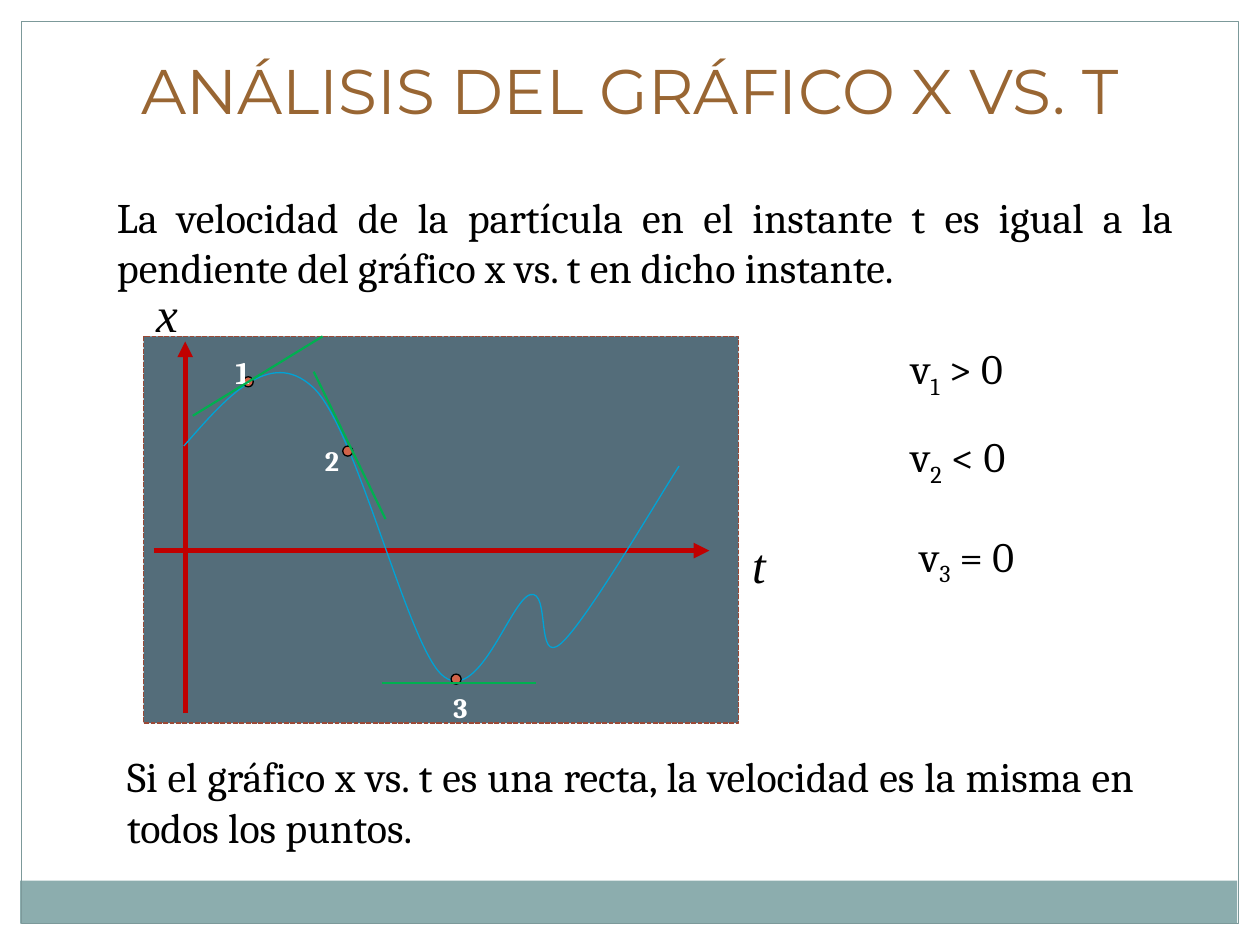
from dataclasses import dataclass

from lxml.etree import SubElement
from pptx import Presentation
from pptx.dml.color import RGBColor
from pptx.enum.dml import MSO_LINE
from pptx.enum.shapes import MSO_CONNECTOR, MSO_SHAPE
from pptx.enum.text import PP_ALIGN
from pptx.oxml.ns import qn
from pptx.shapes.autoshape import Shape
from pptx.slide import Slide
from pptx.util import Inches, Pt

BLACK = RGBColor(0x00, 0x00, 0x00)
WHITE = RGBColor(0xFF, 0xFF, 0xFF)
BROWN = RGBColor(0x99, 0x66, 0x33)
FOOTER_TEAL = RGBColor(0x8C, 0xAD, 0xAE)
FRAME_GRAY = RGBColor(0x7C, 0x99, 0x9A)
PLOT_SLATE = RGBColor(0x54, 0x6D, 0x7A)
PLOT_BORDER = RGBColor(0x9B, 0x49, 0x36)
AXIS_RED = RGBColor(0xC0, 0x00, 0x00)
CURVE_BLUE = RGBColor(0x00, 0xA3, 0xD6)
TANGENT_GREEN = RGBColor(0x00, 0xB0, 0x50)
POINT_ORANGE = RGBColor(0xD1, 0x63, 0x49)

POINT_SIZE = 0.08

Position = tuple[float, float]
Box = tuple[float, float, float, float]


@dataclass(frozen=True)
class TextStyle:
    size: int
    font: str = "Cambria"
    color: RGBColor = BLACK
    bold: bool = False
    italic: bool = False
    align: PP_ALIGN = PP_ALIGN.LEFT


@dataclass(frozen=True)
class Segment:
    start: Position
    end: Position


@dataclass(frozen=True)
class CurvePoint:
    number: str
    position: Position
    label_box: Box
    label_size: int


@dataclass(frozen=True)
class Velocity:
    index: str
    relation: str
    box: Box


TITLE = TextStyle(36, "Montserrat", BROWN, align=PP_ALIGN.CENTER)
BODY = TextStyle(24, align=PP_ALIGN.JUSTIFY)
VELOCITY = TextStyle(24)
AXIS_NAME = TextStyle(28, "Times New Roman", italic=True)

AXES = [
    Segment((1.22, 4.37), (5.63, 4.37)),
    Segment((1.47, 5.66), (1.47, 2.71)),
]
TANGENTS = [
    Segment((1.53, 3.3), (2.56, 2.67)),
    Segment((3.06, 4.12), (2.49, 2.95)),
    Segment((3.03, 5.42), (4.25, 5.42)),
]
# Start point, then two control points and an end point for each arc.
CURVE = [
    (1.46, 3.54),
    (1.8, 3.15), (2.14, 2.76), (2.48, 3.07),
    (2.82, 3.37), (3.22, 5.07), (3.5, 5.35),
    (3.79, 5.63), (4.05, 4.76), (4.21, 4.72),
    (4.37, 4.68), (4.25, 5.28), (4.45, 5.11),
    (4.65, 4.94), (5.24, 3.93), (5.39, 3.7),
]
CURVE_POINTS = [
    CurvePoint("1", (1.93, 2.99), (1.77, 2.75, 0.63, 0.4), 18),
    CurvePoint("2", (2.72, 3.54), (2.48, 3.47, 0.63, 0.37), 16),
    CurvePoint("3", (3.58, 5.35), (3.5, 5.43, 0.63, 0.37), 16),
]
VELOCITIES = [
    Velocity("1", " > 0", (7.13, 2.67, 1.18, 0.5)),
    Velocity("2", " < 0", (7.13, 3.37, 1.34, 0.5)),
    Velocity("3", " = 0", (7.2, 4.16, 1.1, 0.5)),
]


def add_filled_shape(slide: Slide, kind: MSO_SHAPE, box: Box,
                     fill: RGBColor | None = None,
                     line: RGBColor | None = None, width: float = 0.75) -> Shape:
    """Add a preset shape; a missing fill or line colour leaves that part empty."""
    shape = slide.shapes.add_shape(kind, *map(Inches, box))
    shape.shadow.inherit = False
    if fill is None:
        shape.fill.background()
    else:
        shape.fill.solid()
        shape.fill.fore_color.rgb = fill
    if line is None:
        shape.line.fill.background()
    else:
        shape.line.color.rgb = line
        shape.line.width = Pt(width)
    return shape


def add_text(slide: Slide, box: Box, style: TextStyle, *texts: str,
             wrap: bool = True) -> None:
    """Add one paragraph; every second text is a subscript."""
    frame = slide.shapes.add_textbox(*map(Inches, box)).text_frame
    frame.word_wrap = wrap
    paragraph = frame.paragraphs[0]
    paragraph.alignment = style.align
    font = paragraph.font
    font.name = style.font
    font.size = Pt(style.size)
    font.color.rgb = style.color
    font.bold = style.bold
    font.italic = style.italic
    for position, text in enumerate(texts):
        run = paragraph.add_run()
        run.text = text
        if position % 2:
            run._r.get_or_add_rPr().set("baseline", "-25000")


def add_line(slide: Slide, segment: Segment, color: RGBColor, width: float,
             arrow: bool = False) -> None:
    connector = slide.shapes.add_connector(
        MSO_CONNECTOR.STRAIGHT, *map(Inches, segment.start + segment.end))
    connector.line.color.rgb = color
    connector.line.width = Pt(width)
    if arrow:
        SubElement(connector.line._get_or_add_ln(), qn("a:tailEnd"), type="triangle")
    SubElement(connector._element.spPr, qn("a:effectLst"))


def add_curve(slide: Slide, points: list[Position]) -> None:
    """Draw a chain of Bézier arcs: each three line steps become one arc."""
    start, *rest = [(Inches(x), Inches(y)) for x, y in points]
    builder = slide.shapes.build_freeform(*start)
    builder.add_line_segments(rest, close=False)
    curve = builder.convert_to_shape()
    steps = list(curve._element.iter(qn("a:lnTo")))
    outline = steps[0].getparent()
    for first in range(0, len(steps), 3):
        arc = SubElement(outline, qn("a:cubicBezTo"))
        for step in steps[first:first + 3]:
            arc.append(step[0])
            outline.remove(step)
    curve.shadow.inherit = False
    curve.fill.background()
    curve.line.color.rgb = CURVE_BLUE
    curve.line.width = Pt(0.75)


def add_curve_point(slide: Slide, point: CurvePoint) -> None:
    add_filled_shape(slide, MSO_SHAPE.OVAL,
                     (*point.position, POINT_SIZE, POINT_SIZE), POINT_ORANGE, BLACK)
    add_text(slide, point.label_box,
             TextStyle(point.label_size, color=WHITE, bold=True), point.number)


def main() -> None:
    presentation = Presentation()
    presentation.slide_width = Inches(10)
    presentation.slide_height = Inches(7.5)
    slide = presentation.slides.add_slide(presentation.slide_layouts[6])

    add_filled_shape(slide, MSO_SHAPE.RECTANGLE, (0.16, 6.99, 9.66, 0.34), FOOTER_TEAL)
    add_filled_shape(slide, MSO_SHAPE.RECTANGLE, (0.17, 0.17, 9.66, 7.16), line=FRAME_GRAY)
    plot = add_filled_shape(slide, MSO_SHAPE.RECTANGLE, (1.14, 2.67, 4.72, 3.07),
                            PLOT_SLATE, PLOT_BORDER, 0.9)
    plot.line.dash_style = MSO_LINE.SQUARE_DOT

    add_text(slide, (0.73, 0.36, 8.54, 0.95), TITLE,
             "ANÁLISIS DEL GRÁFICO X VS. T", wrap=False)
    add_text(slide, (0.83, 1.47, 8.58, 0.91), BODY,
             "La velocidad de la partícula en el instante t es igual a la "
             "pendiente del gráfico x vs. t en dicho instante.")

    for axis in AXES:
        add_line(slide, axis, AXIS_RED, 3, arrow=True)
    add_text(slide, (1.14, 2.2, 0.71, 0.57), AXIS_NAME, "x")
    add_text(slide, (5.87, 4.19, 0.71, 0.57), AXIS_NAME, "t")
    add_curve(slide, CURVE)
    for point in CURVE_POINTS:
        add_curve_point(slide, point)
    for velocity in VELOCITIES:
        add_text(slide, velocity.box, VELOCITY, "v", velocity.index, velocity.relation)
    add_text(slide, (0.91, 5.91, 8.19, 0.91), BODY,
             "Si el gráfico x vs. t es una recta, la velocidad es la misma en "
             "todos los puntos.")
    for tangent in TANGENTS:
        add_line(slide, tangent, TANGENT_GREEN, 1.25)

    presentation.save("out.pptx")


if __name__ == "__main__":
    main()
